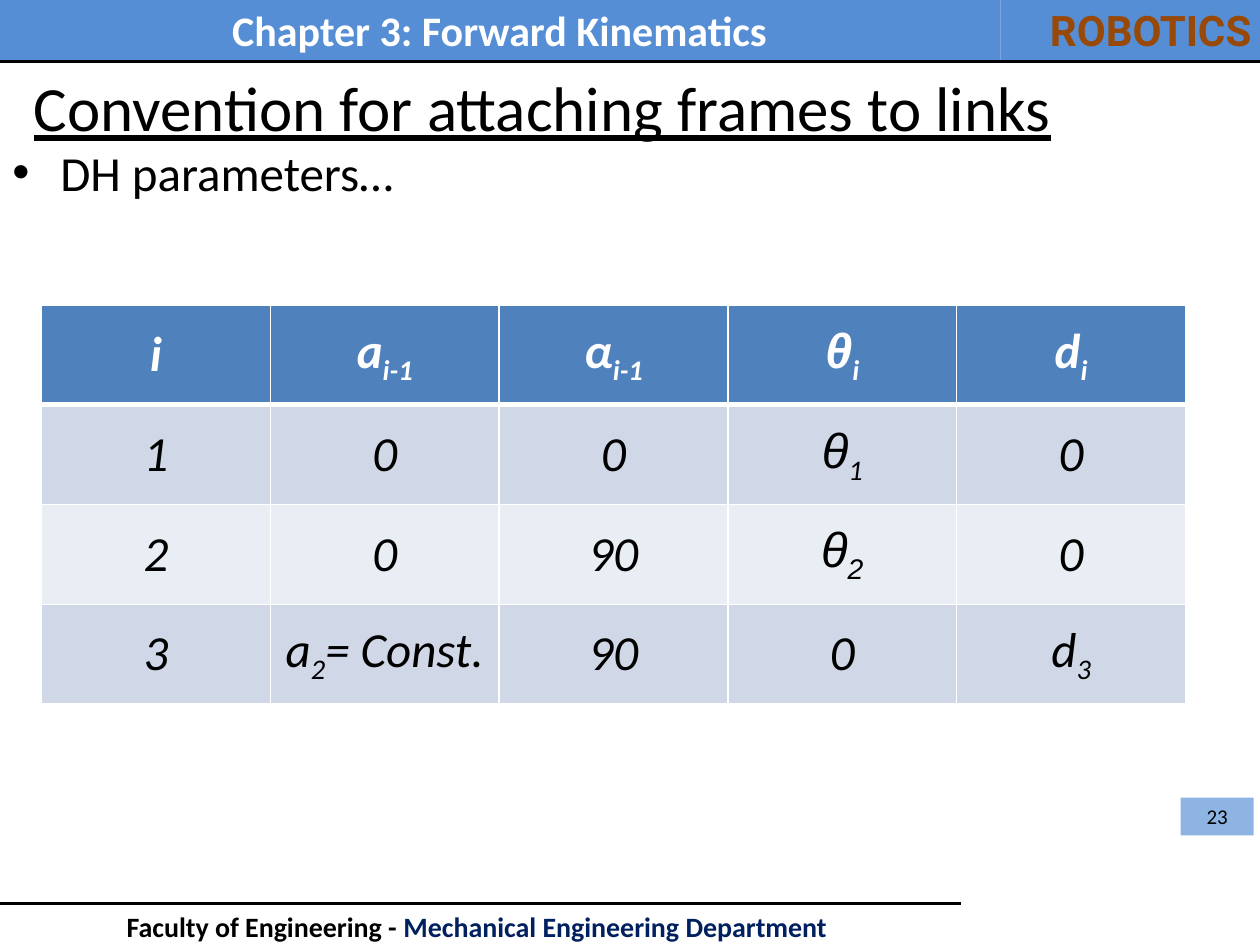
from pptx import Presentation
from pptx.dml.color import RGBColor
from pptx.enum.shapes import MSO_CONNECTOR, MSO_SHAPE
from pptx.enum.text import MSO_ANCHOR, PP_ALIGN
from pptx.oxml import parse_xml
from pptx.oxml.ns import nsdecls
from pptx.util import Inches, Pt

LINE = MSO_CONNECTOR.STRAIGHT
RECT = MSO_SHAPE.RECTANGLE
TOP, MID = MSO_ANCHOR.TOP, MSO_ANCHOR.MIDDLE
LEFT, MIDDLE, RIGHT, FULL = PP_ALIGN.LEFT, PP_ALIGN.CENTER, PP_ALIGN.RIGHT, PP_ALIGN.JUSTIFY

WIDE, HIGH = Inches(10), Inches(7.5)
COLS, ROWS = 100, 75
BLUE, BLACK, WHITE = "558ED5", "000000", "FFFFFF"
HEAD, BANDS = "4F81BD", ("D0D8E8", "E9EDF4")
DATA = [
    ["i", "a_i-1", "α_i-1", "θ_i", "d_i"],
    ["1", "0", "0", "θ_1", "0"],
    ["2", "0", "90", "θ_2", "0"],
    ["3", "a_2_= Const.", "90", "0", "d_3"],
]


def color(code):
    return RGBColor.from_string(code)


def place(col, row):
    return round(WIDE * col / COLS), round(HIGH * row / ROWS)


def style(font, form):
    font.color.rgb = color(form.get("color", BLACK))
    for key, value in form.items():
        if key != "color":
            setattr(font, key, value)


def write(para, text, size, **form):
    run = para.add_run()
    run.text = text
    style(run.font, {"name": "Calibri", "size": Pt(size), **form})
    return run


def fit(shape, align, anchor):
    frame = shape.text_frame
    frame.word_wrap = True
    frame.vertical_anchor = anchor
    para = frame.paragraphs[0]
    para.alignment = align
    return para


def label(slide, box, align=LEFT, anchor=TOP):
    shape = slide.shapes.add_textbox(*place(*box[:2]), *place(*box[2:]))
    return fit(shape, align, anchor)


def block(slide, box, fill, align=MIDDLE, anchor=TOP):
    shape = slide.shapes.add_shape(RECT, *place(*box[:2]), *place(*box[2:]))
    shape.shadow.inherit = False
    shape.fill.solid()
    shape.fill.fore_color.rgb = color(fill)
    shape.line.fill.background()
    return fit(shape, align, anchor)


def rule(slide, row, end):
    line = slide.shapes.add_connector(LINE, *place(0, row), *place(end, row))
    line.line.color.rgb = color(BLACK)
    line.line.width = Pt(2)
    line._element.spPr.append(parse_xml(f"<a:effectLst {nsdecls('a')}/>"))


def bullet(para, indent):
    props = para._p.get_or_add_pPr()
    props.set("marL", str(indent))
    props.set("indent", str(-indent))
    for xml in ('buFont {} typeface="Arial"', 'buChar {} char="•"'):
        props.append(parse_xml(f"<a:{xml.format(nsdecls('a'))}/>"))


def border(cell, **sides):
    props = cell._tc.get_or_add_tcPr()
    for spot, (side, width) in enumerate(sides.items()):
        props.insert(spot, parse_xml(
            f'<a:{side} {nsdecls("a")} w="{Pt(width)}"><a:solidFill>'
            f'<a:srgbClr val="{WHITE}"/></a:solidFill></a:{side}>'))


def fill_cell(cell, text, row):
    cell.fill.solid()
    cell.fill.fore_color.rgb = color(BANDS[(row - 1) % 2] if row else HEAD)
    border(cell, lnL=1, lnR=1, lnT=3 if row == 1 else 1, lnB=1 if row else 3)
    cell.vertical_anchor = MID
    para = cell.text_frame.paragraphs[0]
    para.alignment = MIDDLE
    for spot, part in enumerate(text.split("_")):
        name = "Arial" if part == "θ" or text == "θ_2" else "Calibri"
        run = write(para, part, 28, name=name, italic=True, bold=not row,
                    color=BLACK if row else WHITE)
        if spot % 2:
            run.font._element.set("baseline", "-25000")


def grid(slide, box, data):
    frame = slide.shapes.add_table(
        len(data), len(data[0]), *place(*box[:2]), *place(*box[2:]))
    for row, texts in enumerate(data):
        for col, text in enumerate(texts):
            fill_cell(frame.table.cell(row, col), text, row)


def main():
    deck = Presentation()
    deck.slide_width, deck.slide_height = WIDE, HIGH
    slide = deck.slides.add_slide(deck.slide_layouts[6])

    para = block(slide, (-0.1, -0.1, 79.5, 5), BLUE)
    write(para, "Chapter 3: Forward Kinematics", 24, color=WHITE, bold=True)
    para = label(slide, (-0.1, 71.7, 76.4, 3.7), MIDDLE)
    write(para, "Faculty of Engineering - ", 16, bold=True)
    write(para, "Mechanical Engineering Department ", 16, bold=True, color="002060")
    rule(slide, 71.7, 76.3)
    para = block(slide, (79.4, -0.1, 20.9, 5), BLUE, RIGHT)
    write(para, "ROBOTICS", 24, name="Roboto", bold=True, color="984807")
    rule(slide, 4.9, 100.3)

    para = label(slide, (1.7, 4.9, 98.3, 7.1), anchor=MID)
    write(para, "Convention for attaching frames to links", 36, underline=True)
    para = label(slide, (0, 10.8, 99.2, 60.8), FULL)
    bullet(para, Inches(0.38))
    write(para, "DH parameters…", 28)
    para = block(slide, (93.7, 63.3, 5.8, 3), "8EB4E3", anchor=MID)
    write(para, "23", 12)
    grid(slide, (3.3, 24.2, 90.8, 31.7), DATA)

    deck.save("out.pptx")


if __name__ == "__main__":
    main()
